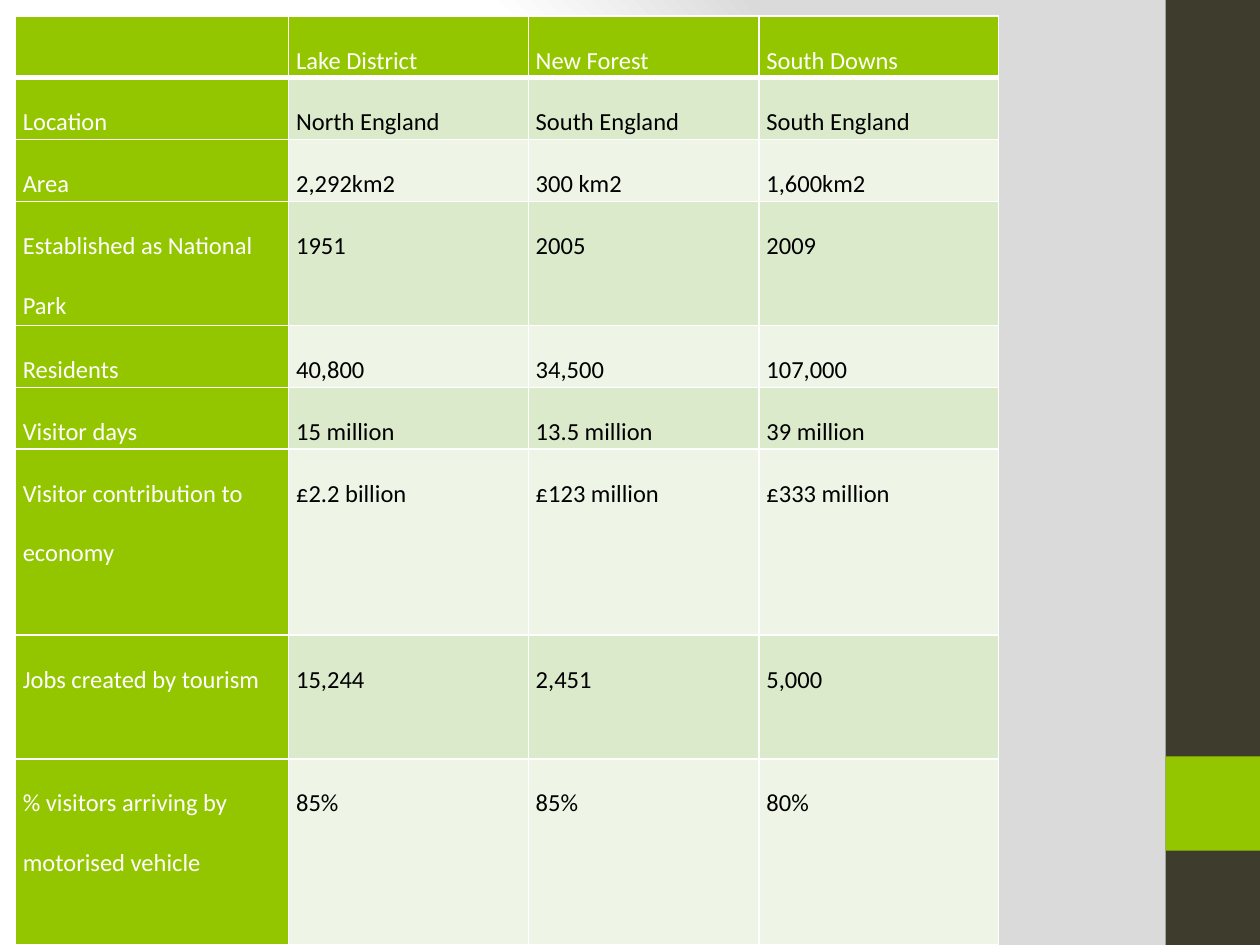
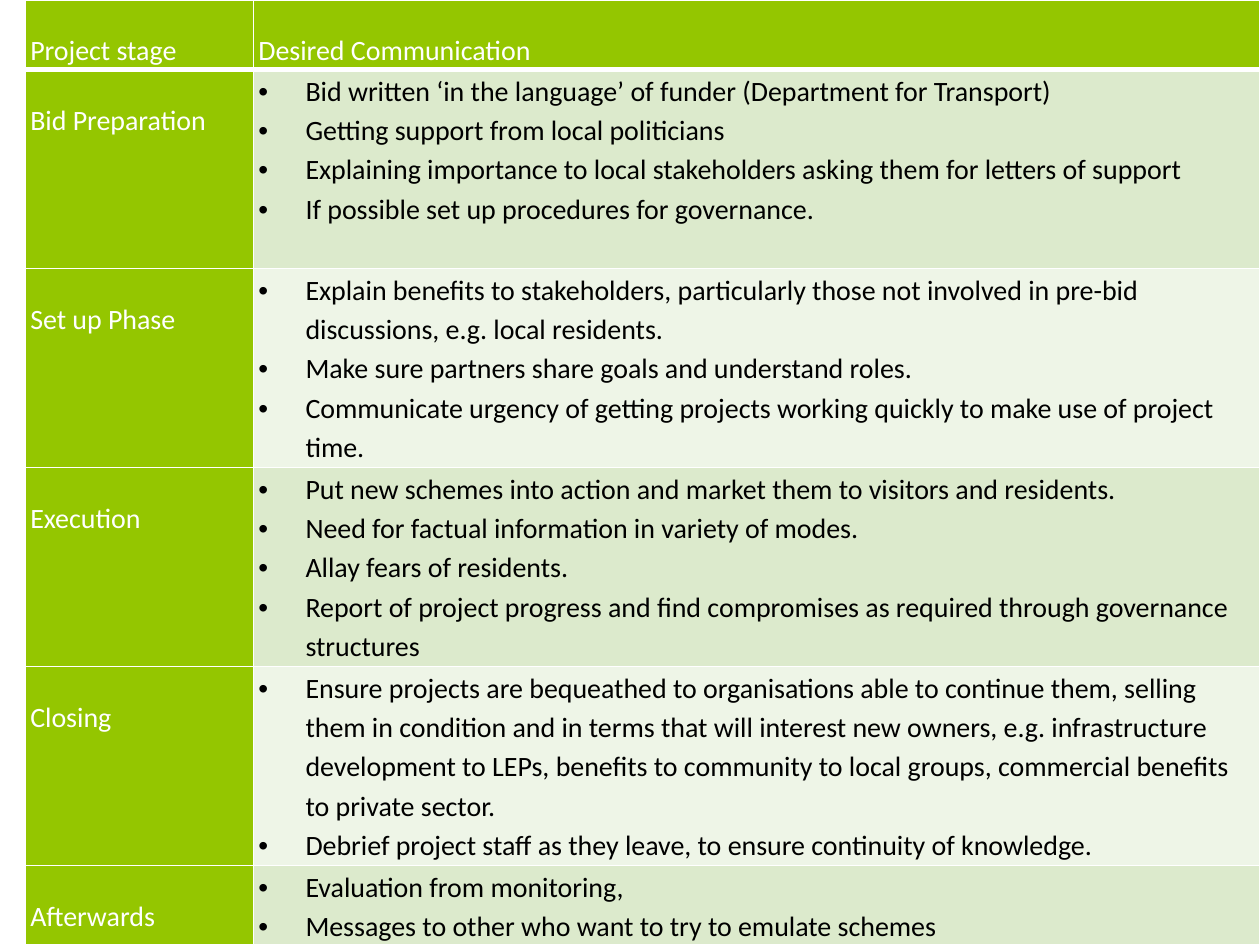
from dataclasses import dataclass

from lxml import etree
from pptx import Presentation
from pptx.dml.color import RGBColor
from pptx.enum.shapes import MSO_SHAPE
from pptx.oxml import parse_xml
from pptx.oxml.ns import nsdecls, qn
from pptx.util import Cm, Pt

RECTANGLE = MSO_SHAPE.RECTANGLE
BLANK_LAYOUT = 6


@dataclass(frozen=True)
class Theme:
    accent: str = "94C600"
    dark: str = "3E3D2D"
    band_odd: str = "DCEACC"
    band_even: str = "EEF5E7"
    white: str = "FFFFFF"
    black: str = "000000"
    shade: str = "DADADA"
    font: str = "Calibri"
    parks_size: int = 14
    stages_size: int = 16
    line_width: int = 1
    header_line_width: int = 3
    label_spacing: float = 2.0
    bullet_spacing: float = 1.15
    bullet_indent: float = 0.95


THEME = Theme()
SLIDE_WIDTH, SLIDE_HEIGHT = 25.4, 19.05

PARKS = [
    ["", "Lake District", "New Forest", "South Downs"],
    ["Location", "North England", "South England", "South England"],
    ["Area", "2,292km2", "300 km2", "1,600km2"],
    ["Established as National Park", "1951", "2005", "2009"],
    ["Residents", "40,800", "34,500", "107,000"],
    ["Visitor days", "15 million", "13.5 million", "39 million"],
    ["Visitor contribution to economy", "£2.2 billion", "£123 million", "£333 million"],
    ["Jobs created by tourism", "15,244", "2,451", "5,000"],
    ["% visitors arriving by motorised vehicle", "85%", "85%", "80%"],
]
PARK_ROW_LINES = [1, 1, 1, 2, 1, 1, 3, 2, 3]

STAGES = [
    ["Project stage", "Desired Communication"],
    ["Bid Preparation", [
        "Bid written ‘in the language’ of funder (Department for Transport)",
        "Getting support from local politicians",
        "Explaining importance to local stakeholders asking them for letters of support",
        "If possible set up procedures for governance.",
    ]],
    ["Set up Phase", [
        "Explain benefits to stakeholders, particularly those not involved in pre-bid "
        "discussions, e.g. local residents.",
        "Make sure partners share goals and understand roles.",
        "Communicate urgency of getting projects working quickly to make use of project time.",
    ]],
    ["Execution", [
        "Put new schemes into action and market them to visitors and residents.",
        "Need for factual information in variety of modes.",
        "Allay fears of residents.",
        "Report of project progress and find compromises as required through governance structures",
    ]],
    ["Closing", [
        "Ensure projects are bequeathed to organisations able to continue them, selling "
        "them in condition and in terms that will interest new owners, e.g. infrastructure "
        "development to LEPs, benefits to community to local groups, commercial benefits "
        "to private sector.",
        "Debrief project staff as they leave, to ensure continuity of knowledge.",
    ]],
    ["Afterwards", [
        "Evaluation from monitoring,",
        "Messages to other who want to try to emulate schemes",
    ]],
]


def set_background(master):
    master.background.fill.solid()
    properties = master.element.find(".//" + qn("p:bgPr"))
    stops = [(0, THEME.white), (75, THEME.white), (100, THEME.shade)]
    stop_xml = "".join(
        f'<a:gs pos="{position * 1000}"><a:srgbClr val="{color}"/></a:gs>'
        for position, color in stops
    )
    gradient = parse_xml(
        f'<a:gradFill {nsdecls("a")} rotWithShape="1"><a:gsLst>{stop_xml}</a:gsLst>'
        '<a:path path="circle">'
        '<a:fillToRect l="20000" t="50000" r="100000" b="50000"/></a:path></a:gradFill>'
    )
    properties.replace(properties.find(qn("a:solidFill")), gradient)


def add_band(slide, left, top, width, height, color):
    shape = slide.shapes.add_shape(RECTANGLE, Cm(left), Cm(top), Cm(width), Cm(height))
    shape.shadow.inherit = False
    shape.fill.solid()
    shape.fill.fore_color.rgb = RGBColor.from_string(color)
    shape.line.fill.background()


def add_side_bands(slide, left, width):
    add_band(slide, left, 0, width, SLIDE_HEIGHT, THEME.dark)
    add_band(slide, left, SLIDE_HEIGHT - 2 * width, width, width, THEME.accent)


def write_text(paragraph, text, *, size, color, spacing, bullet=False):
    if bullet:
        properties = paragraph._p.get_or_add_pPr()
        indent = Cm(THEME.bullet_indent)
        properties.set("marL", str(indent))
        properties.set("indent", str(-indent))
        etree.SubElement(properties, qn("a:buFont")).set("typeface", "Arial")
        etree.SubElement(properties, qn("a:buChar")).set("char", "•")
    paragraph.line_spacing = spacing
    run = paragraph.add_run()
    run.text = text
    run.font.name = THEME.font
    run.font.size = Pt(size)
    run.font.color.rgb = RGBColor.from_string(color)


def set_borders(cell, bottom_width):
    properties = cell._tc.get_or_add_tcPr()
    widths = dict.fromkeys(("lnL", "lnR", "lnT"), THEME.line_width)
    widths["lnB"] = bottom_width
    for side, width in widths.items():
        properties.append(parse_xml(
            f'<a:{side} {nsdecls("a")} w="{Pt(width)}"><a:solidFill>'
            f'<a:srgbClr val="{THEME.white}"/></a:solidFill></a:{side}>'
        ))


def fill_cell(cell, content, row, column, size, inset):
    is_label = row == 0 or column == 0
    band = THEME.band_odd if row % 2 else THEME.band_even
    set_borders(cell, THEME.line_width if row else THEME.header_line_width)
    cell.fill.solid()
    cell.fill.fore_color.rgb = RGBColor.from_string(THEME.accent if is_label else band)
    cell.margin_left = cell.margin_right = Cm(inset)
    cell.margin_top = cell.margin_bottom = 0
    bulleted = isinstance(content, list)
    frame = cell.text_frame
    for index, text in enumerate(content if bulleted else [content]):
        if text:
            write_text(
                frame.add_paragraph() if index else frame.paragraphs[0],
                text,
                size=size,
                color=THEME.white if is_label else THEME.black,
                spacing=THEME.bullet_spacing if bulleted else THEME.label_spacing,
                bullet=bulleted,
            )


def add_banded_table(slide, left, top, widths, heights, rows, *, size, inset):
    table = slide.shapes.add_table(
        len(rows), len(widths), Cm(left), Cm(top), Cm(sum(widths)), Cm(sum(heights))
    ).table
    for table_column, width in zip(table.columns, widths):
        table_column.width = Cm(width)
    for row, (contents, height) in enumerate(zip(rows, heights)):
        table.rows[row].height = Cm(height)
        for column, content in enumerate(contents):
            fill_cell(table.cell(row, column), content, row, column, size, inset)


def build_parks_slide(slide, left, top, width, height):
    value_widths = [4.83, 4.65, 4.83]
    line_height = height / sum(PARK_ROW_LINES)
    add_banded_table(
        slide, left, top,
        [width - sum(value_widths), *value_widths],
        [lines * line_height for lines in PARK_ROW_LINES],
        PARKS, size=THEME.parks_size, inset=0.15,
    )


def build_stages_slide(slide, left, top, width, height):
    stage_width, header_height, last_height = 4.6, 1.4, 1.6
    phase_count = len(STAGES) - 2
    phase_height = (height - header_height - last_height) / phase_count
    add_banded_table(
        slide, left, top,
        [stage_width, width - stage_width],
        [header_height, *[phase_height] * phase_count, last_height],
        STAGES, size=THEME.stages_size, inset=0.1,
    )


def main():
    presentation = Presentation()
    presentation.slide_width = Cm(SLIDE_WIDTH)
    presentation.slide_height = Cm(SLIDE_HEIGHT)
    set_background(presentation.slide_master)
    pages = [
        (build_parks_slide, (0.31, 0.32, 19.82, 18.72)),
        (build_stages_slide, (0.51, 0, 24.89, 19.05)),
    ]
    for build_slide, box in pages:
        slide = presentation.slides.add_slide(presentation.slide_layouts[BLANK_LAYOUT])
        add_side_bands(slide, 23.5, 1.9)
        build_slide(slide, *box)
    presentation.save("out.pptx")


if __name__ == "__main__":
    main()
